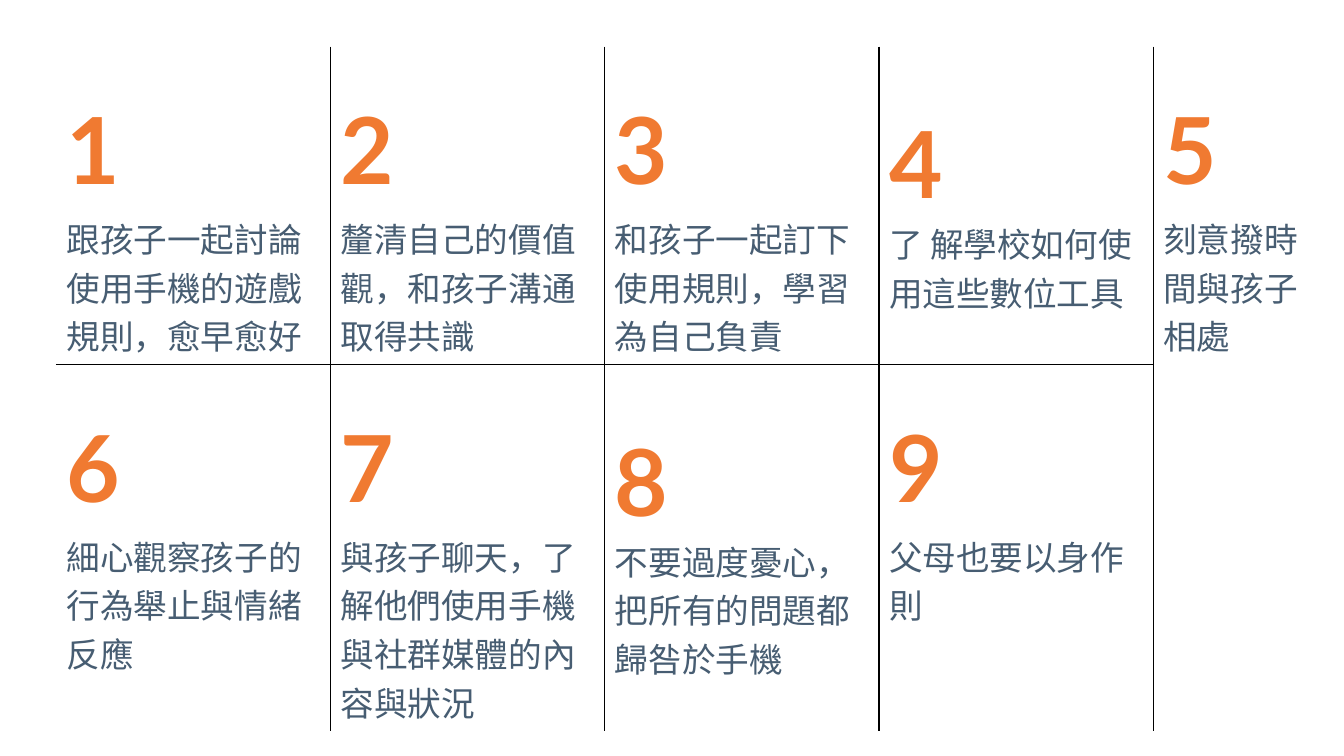
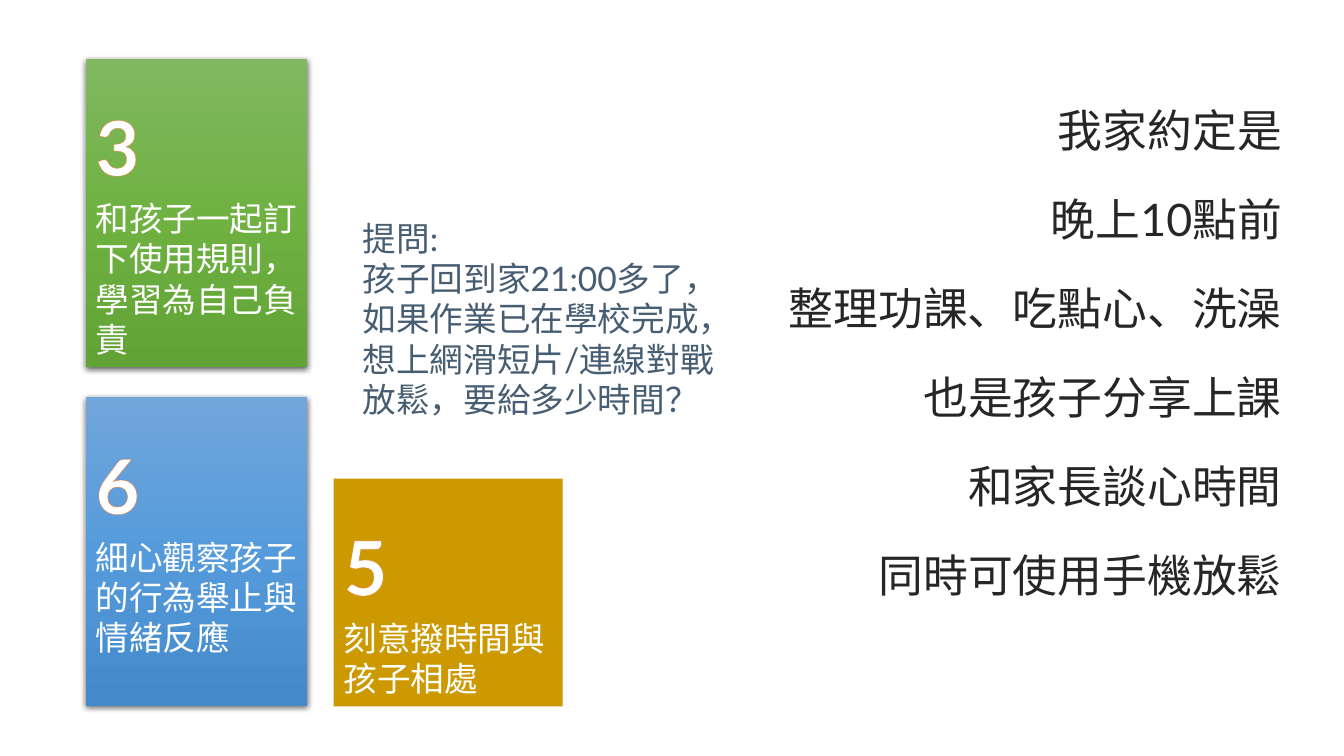
from dataclasses import dataclass
from typing import Optional

from lxml import etree
from pptx import Presentation
from pptx.dml.color import RGBColor
from pptx.enum import shapes, text
from pptx.oxml import ns
from pptx.util import Cm, Pt


@dataclass(frozen=True)
class Theme:
    font: str = "Lato"
    white: str = "FFFFFF"
    black: str = "000000"
    accent: str = "F07A31"
    body: str = "475D72"
    ink: str = "262626"
    green: tuple = ("81B861", "6FB242", "62A336")
    blue: tuple = ("71A6DB", "559BDB", "448ACA")
    gold: tuple = ("CC9900",)
    body_size: int = 24
    answer_size: int = 32
    table_digit: int = 66
    table_gap: int = 96
    card_digit: int = 54
    card_gap: int = 80


T = Theme()


@dataclass(frozen=True)
class Tip:
    number: int
    words: str
    gap: Optional[int] = T.table_gap
    spacing: Optional[float] = None
    before: Optional[int] = None


@dataclass(frozen=True)
class Card:
    tip: Tip
    left: float
    top: float
    width: float
    height: float
    colors: tuple


TIPS = [
    Tip(1, "跟孩子一起討論使用手機的遊戲規則，愈早愈好"),
    Tip(2, "釐清自己的價值觀，和孩子溝通取得共識"),
    Tip(3, "和孩子一起訂下使用規則，學習為自己負責"),
    Tip(4, "了 解學校如何使用這些數位工具", None, 1.5, 12),
    Tip(5, "刻意撥時間與孩子相處"),
    Tip(6, "細心觀察孩子的行為舉止與情緒反應"),
    Tip(7, "與孩子聊天，了解他們使用手機與社群媒體的內容與狀況"),
    Tip(8, "不要過度憂心，把所有的問題都歸咎於手機", T.body_size, 1.5),
    Tip(9, "父母也要以身作則"),
]
CARDS = [
    Card(TIPS[2], 2.16, 1.48, 5.59, 7.77, T.green),
    Card(TIPS[5], 2.16, 10.01, 5.59, 7.77, T.blue),
    Card(TIPS[4], 8.41, 12.06, 5.77, 5.74, T.gold),
]
QUESTION = [
    "提問:",
    "孩子回到家21:00多了，如果作業已在學校完成，想上網滑短片/連線對戰放鬆，要給多少時間？",
]
ANSWER = [
    "我家約定是",
    "晚上10點前",
    "整理功課、吃點心、洗澡",
    "也是孩子分享上課",
    "和家長談心時間",
    "同時可使用手機放鬆",
]


def add_xml(parent, tag: str, index: Optional[int] = None, **attrs):
    el = etree.Element(ns.qn(tag), {k: str(v) for k, v in attrs.items()})
    parent.insert(len(parent) if index is None else index, el)
    return el


def add_line(parent, tag: str, color: str, width: float, index: int) -> None:
    ln = add_xml(parent, tag, index, w=Pt(width))
    add_xml(add_xml(ln, "a:solidFill"), "a:srgbClr", val=color)


def add_run(p, words: str, *, size: int, color: str, bold: bool = False,
            outline: Optional[str] = None, ea: Optional[str] = None) -> None:
    r = p.add_run()
    r.text = words
    r.font.size, r.font.bold, r.font.name = Pt(size), bold, T.font
    r.font.color.rgb = RGBColor.from_string(color)
    rpr = r.font._element
    if outline:
        add_line(rpr, "a:ln", outline, 1.5, 0)
    if ea:
        add_xml(rpr, "a:ea", typeface=ea)


def add_tip(tf, tip: Tip, *, digit: int, gap: Optional[int], digit_color: str,
            color: str, outline: Optional[str] = None,
            ea: Optional[str] = None) -> None:
    tf.word_wrap = True
    p = tf.paragraphs[0]
    p.alignment = text.PP_ALIGN.LEFT
    add_run(p, str(tip.number), size=digit, color=digit_color, bold=True,
            outline=outline, ea=ea)
    if gap:
        add_run(p, " ", size=gap, color=color, ea=ea)
    if tip.spacing:
        p.line_spacing = tip.spacing
    if tip.before:
        p.space_before = Pt(tip.before)
    p = tf.add_paragraph()
    p.alignment = text.PP_ALIGN.LEFT
    add_run(p, tip.words, size=T.body_size, color=color, ea=ea)


def add_lines(s, box: tuple, lines: list, *, size: int, color: str,
              align=text.PP_ALIGN.LEFT, spacing: Optional[float] = None,
              before: int = 0) -> None:
    tf = s.shapes.add_textbox(*map(Cm, box)).text_frame
    tf.word_wrap = True
    for i, line in enumerate(lines):
        p = tf.add_paragraph() if i else tf.paragraphs[0]
        p.alignment, p.line_spacing, p.space_before = align, spacing, Pt(before)
        add_run(p, line, size=size, color=color, ea=T.font)


def set_borders(cell, row: int, col: int, last_col: int) -> None:
    last = col == last_col
    edges = [
        ("a:lnL", col > 0),
        ("a:lnR", not last),
        ("a:lnT", row > 0 and not last),
        ("a:lnB", row == 0 and not last),
    ]
    tcpr = cell._tc.get_or_add_tcPr()
    for i, (tag, dark) in enumerate(edges):
        add_line(tcpr, tag, T.black if dark else T.white, 1, i)


def add_tip_table(s) -> None:
    widths, heights = [6.91] * 4 + [3.99], [6.81, 7.9]
    table = s.shapes.add_table(len(heights), len(widths), Cm(1.42), Cm(1.19),
                               Cm(sum(widths)), Cm(sum(heights))).table
    table.first_row = table.horz_banding = False
    for column, width in zip(table.columns, widths):
        column.width = Cm(width)
    last_col = len(widths) - 1
    table.cell(0, last_col).merge(table.cell(1, last_col))
    for row, height in enumerate(heights):
        table.rows[row].height = Cm(height)
        for col in range(len(widths)):
            cell = table.cell(row, col)
            cell.fill.solid()
            cell.fill.fore_color.rgb = RGBColor.from_string(T.white)
            set_borders(cell, row, col, last_col)
            if not cell.is_spanned:
                tip = TIPS[row * len(widths) + col]
                add_tip(cell.text_frame, tip, digit=T.table_digit, gap=tip.gap,
                        digit_color=T.accent, color=T.body)


def fill_gradient(sp, colors: tuple) -> None:
    sp.fill.gradient()
    sp.fill.gradient_angle = 270
    stops = sp._element.spPr.find(ns.qn("a:gradFill")).find(ns.qn("a:gsLst"))
    for stop in list(stops):
        stops.remove(stop)
    for i, color in enumerate(colors):
        stop = add_xml(stops, "a:gs", pos=i * 100000 // (len(colors) - 1))
        add_xml(stop, "a:srgbClr", val=color)


def add_shadow(sp) -> None:
    effects = sp._element.spPr.find(ns.qn("a:effectLst"))
    shadow = add_xml(effects, "a:outerShdw", blurRad=Pt(4.5), dist=Pt(1.5),
                     dir=5400000, algn="ctr", rotWithShape=0)
    add_xml(add_xml(shadow, "a:srgbClr", val=T.black), "a:alpha", val=63000)


def add_card(s, card: Card) -> None:
    sp = s.shapes.add_shape(shapes.MSO_SHAPE.RECTANGLE, Cm(card.left),
                            Cm(card.top), Cm(card.width), Cm(card.height))
    sp.shadow.inherit = False
    sp.line.fill.background()
    if len(card.colors) > 1:
        fill_gradient(sp, card.colors)
        add_shadow(sp)
    else:
        sp.fill.solid()
        sp.fill.fore_color.rgb = RGBColor.from_string(card.colors[0])
    tf = sp.text_frame
    tf.vertical_anchor = text.MSO_ANCHOR.TOP
    add_tip(tf, card.tip, digit=T.card_digit, gap=T.card_gap,
            digit_color=T.white, color=T.white, outline=T.accent, ea=T.font)


def main() -> None:
    prs = Presentation()
    prs.slide_width, prs.slide_height = Cm(33.87), Cm(19.05)
    blank = prs.slide_layouts[6]

    add_tip_table(prs.slides.add_slide(blank))

    s = prs.slides.add_slide(blank)
    add_lines(s, (8.89, 5.36, 9.78, 5.38), QUESTION, size=T.body_size,
              color=T.body)
    for card in CARDS:
        add_card(s, card)
    add_lines(s, (19.33, 1.78, 13.23, 14.96), ANSWER, size=T.answer_size,
              color=T.ink, align=text.PP_ALIGN.RIGHT, spacing=1.5, before=6)

    prs.save("out.pptx")


if __name__ == "__main__":
    main()
